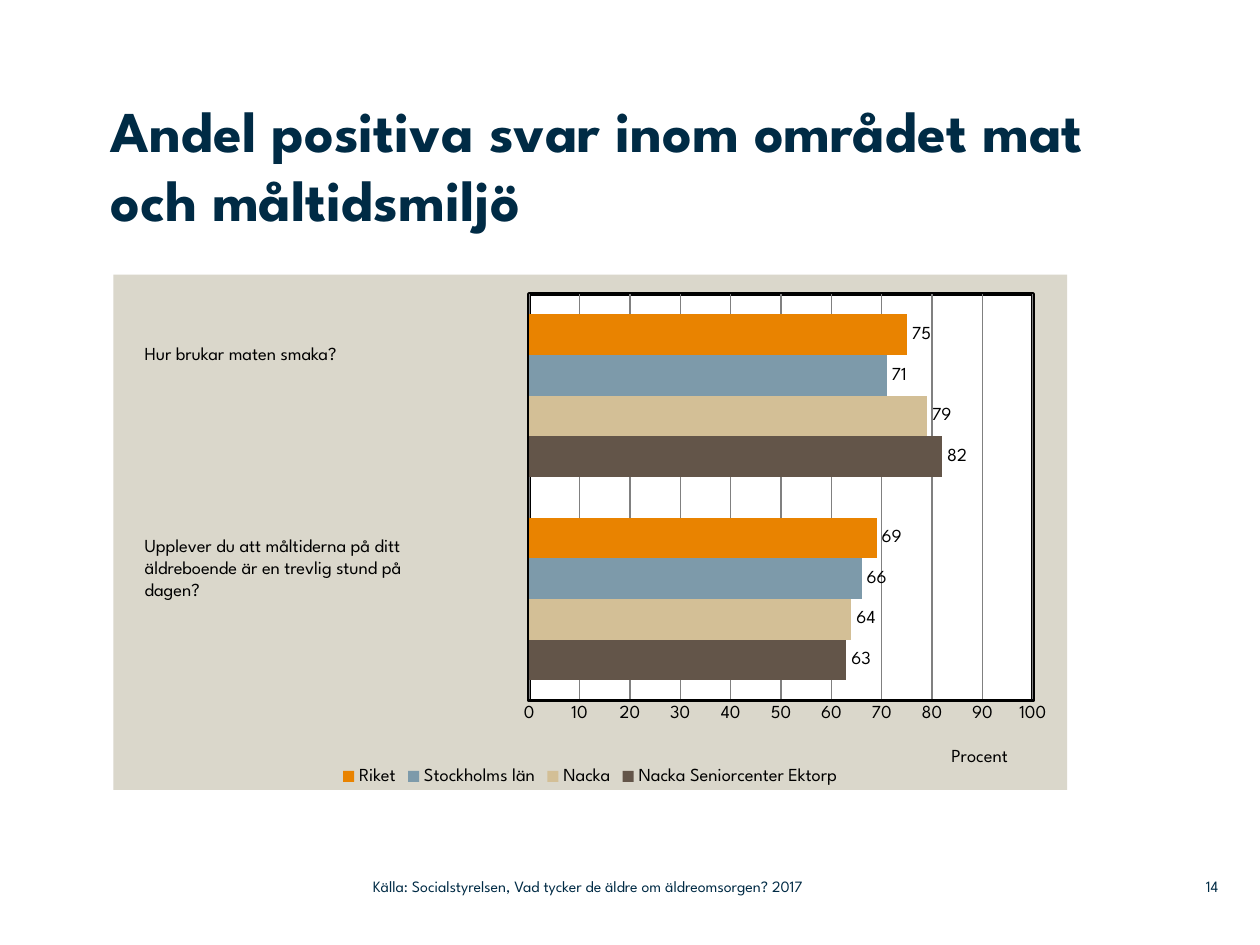
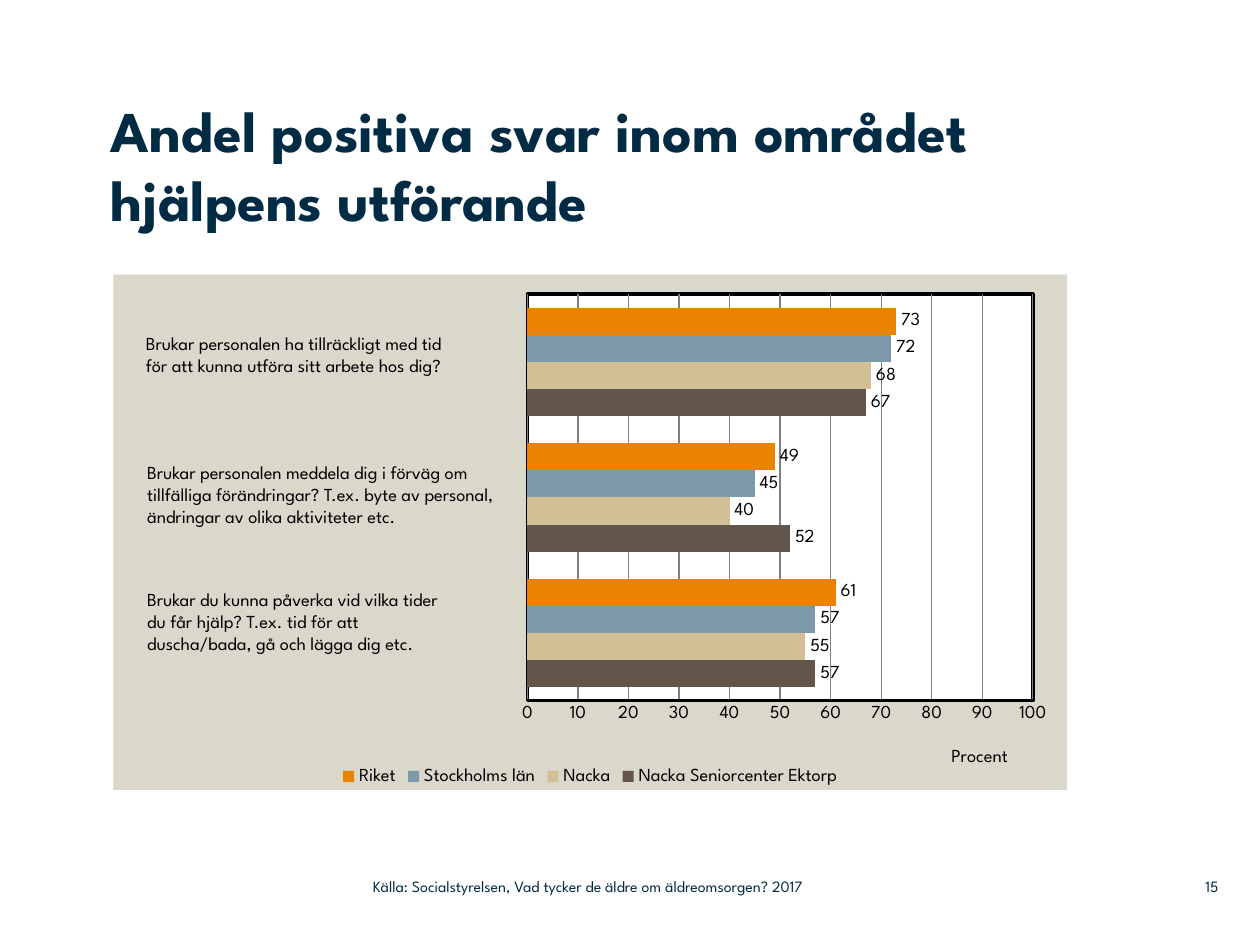
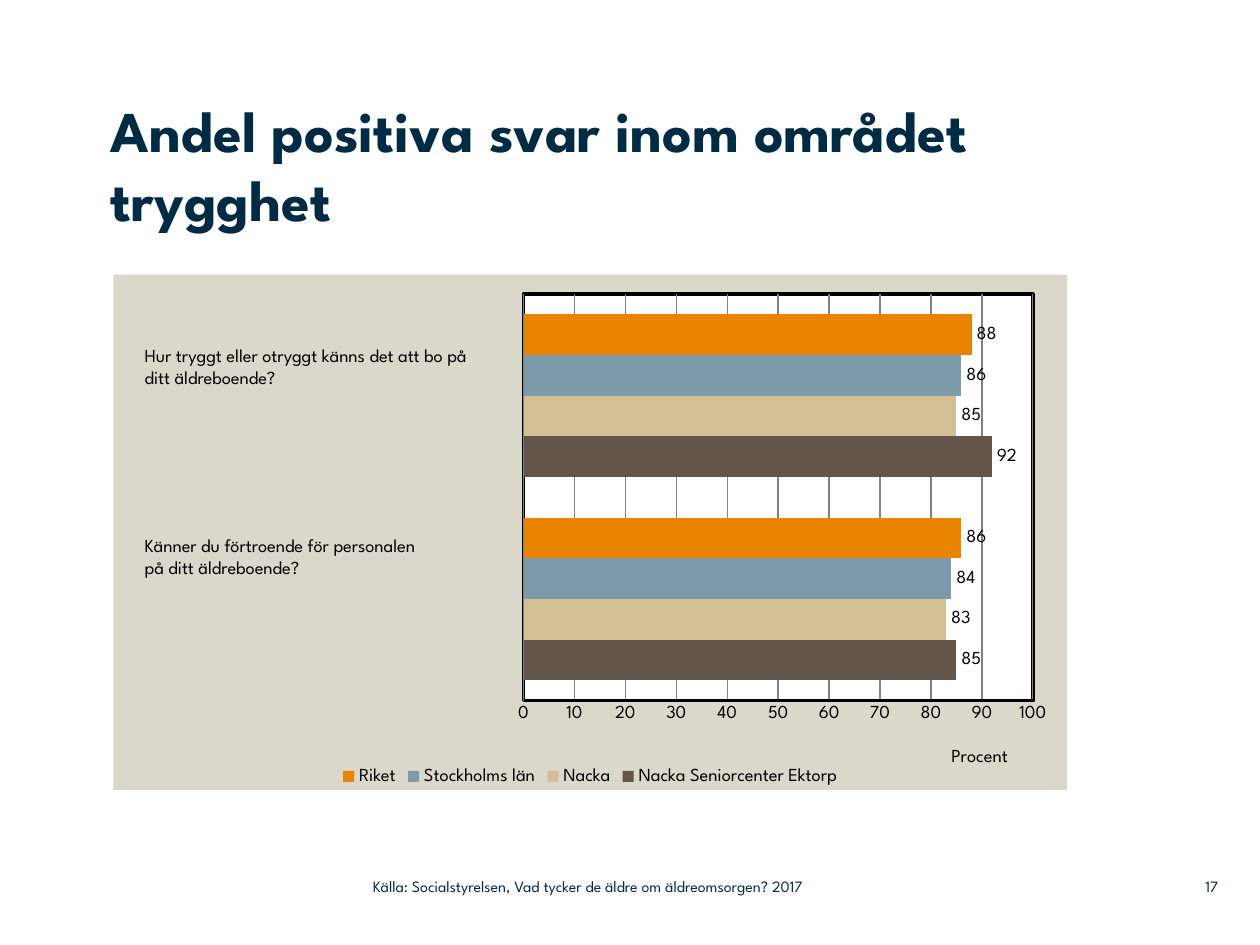
"""Builds three slides that compare positive answers in bar charts."""
from lxml.etree import SubElement, fromstring
from pptx import Presentation
from pptx.chart.data import CategoryChartData
from pptx.dml.color import RGBColor
from pptx.enum.chart import XL_CHART_TYPE as ChartType
from pptx.enum.chart import XL_LABEL_POSITION as LabelPosition
from pptx.enum.chart import XL_LEGEND_POSITION as LegendPosition
from pptx.enum.chart import XL_TICK_MARK as TickMark
from pptx.enum.text import MSO_ANCHOR as Anchor
from pptx.enum.text import MSO_AUTO_SIZE as AutoSize
from pptx.enum.text import PP_ALIGN as Align
from pptx.oxml.ns import nsdecls, qn
from pptx.util import Inches, Pt

NAVY = RGBColor(0x00, 0x2B, 0x45)
BLACK = RGBColor(0x00, 0x00, 0x00)
WHITE = RGBColor(0xFF, 0xFF, 0xFF)
GREY = RGBColor(0x80, 0x80, 0x80)
STONE = RGBColor(0xDA, 0xD7, 0xCB)
BROWN = RGBColor(0x63, 0x55, 0x49)
SAND = RGBColor(0xD3, 0xBF, 0x96)
BLUE = RGBColor(0x7D, 0x9A, 0xAA)
ORANGE = RGBColor(0xE9, 0x83, 0x00)

FONT = "League Spartan"
COLUMNS, ROWS = 100, 75
REGIONS = {
    "Nacka Seniorcenter Ektorp": BROWN,
    "Nacka": SAND,
    "Stockholms län": BLUE,
    "Riket": ORANGE,
}
SOURCE = "Källa: Socialstyrelsen, Vad tycker de äldre om äldreomsorgen? 2017"

AREAS = [
    dict(
        title="Andel positiva svar inom området mat och måltidsmiljö",
        title_width=84.2,
        number=14,
        plot=(0.436, 0.528),
        answers=[(63, 82), (64, 79), (66, 71), (69, 75)],
        questions=[
            (10.5, 26.7, 29.7, "Hur brukar maten smaka?"),
            (10.5, 41.9, 29.3, "Upplever du att måltiderna på ditt äldreboende är "
                               "en trevlig stund på\ndagen?"),
        ],
    ),
    dict(
        title="Andel positiva svar inom området hjälpens utförande",
        title_width=76,
        number=15,
        plot=(0.434, 0.53),
        answers=[(57, 52, 67), (55, 40, 68), (57, 45, 72), (61, 49, 73)],
        questions=[
            (10.6, 25.9, 29.9, "Brukar personalen ha tillräckligt med tid\n"
                               "för att kunna utföra sitt arbete hos dig?"),
            (10.7, 36.1, 29.7, "Brukar personalen meddela dig i förväg om tillfälliga "
                               "förändringar? T.ex. byte av personal, ändringar av "
                               "olika aktiviteter etc."),
            (10.7, 46.2, 29.7, "Brukar du kunna påverka vid vilka tider\n"
                               "du får hjälp? T.ex. tid för att\n"
                               "duscha/bada, gå och lägga dig etc."),
        ],
    ),
    dict(
        title="Andel positiva svar inom området trygghet",
        title_width=76,
        number=17,
        plot=(0.43, 0.534),
        answers=[(85, 92), (83, 85), (84, 86), (86, 88)],
        questions=[
            (10.5, 26.8, 29.4, "Hur tryggt eller otryggt känns det att bo på "
                               "ditt äldreboende?"),
            (10.5, 41.9, 29.3, "Känner du förtroende för personalen\n"
                               "på ditt äldreboende?"),
        ],
    ),
]


def style_font(font, size=10.5, color=BLACK, bold=False):
    font.name = FONT
    font.size = Pt(size)
    font.bold = bold
    font.color.rgb = color


def write(frame, text, align=Align.LEFT, anchor=Anchor.TOP, inset=None, **font_style):
    frame.word_wrap = True
    frame.auto_size = AutoSize.NONE
    frame.vertical_anchor = anchor
    if inset is not None:
        frame.margin_left = frame.margin_right = Pt(inset)
        frame.margin_top = frame.margin_bottom = Pt(inset)
    for index, line in enumerate(text.split("\n")):
        paragraph = frame.add_paragraph() if index else frame.paragraphs[0]
        paragraph.alignment = align
        run = paragraph.add_run()
        run.text = line
        style_font(run.font, **font_style)


def set_layout(parent, **places):
    layout = parent.find(qn("c:layout"))
    if layout is None:
        layout = fromstring(f"<c:layout {nsdecls('c')}/>")
        parent.insert(0, layout)
    manual = SubElement(layout, qn("c:manualLayout"))
    for tag, value in places.items():
        SubElement(manual, qn(f"c:{tag}")).set("val", str(value))


def area_format(fill, line=None):
    border = (f'<a:ln w="{Pt(2)}"><a:solidFill><a:srgbClr val="{line}"/></a:solidFill></a:ln>'
              if line is not None else "<a:ln><a:noFill/></a:ln>")
    return fromstring(f'<c:spPr {nsdecls("c", "a")}><a:solidFill><a:srgbClr val="{fill}"/>'
                      f"</a:solidFill>{border}</c:spPr>")


class Deck:
    """Holds the presentation, its grid and the current slide."""

    def __init__(self):
        self.show = Presentation()
        self.show.slide_width, self.show.slide_height = Inches(10), Inches(7.5)
        self.slide = None

    def box(self, left, top, width, height):
        column = self.show.slide_width / COLUMNS
        row = self.show.slide_height / ROWS
        return (round(left * column), round(top * row),
                round(width * column), round(height * row))

    def add_slide(self, title, title_width):
        self.slide = self.show.slides.add_slide(self.show.slide_layouts[5])
        heading = self.slide.shapes.title
        heading.left, heading.top, heading.width, heading.height = self.box(
            8.8, 7.5, title_width, 14.2)
        write(heading.text_frame, title, inset=0, size=33, color=NAVY, bold=True)

    def add_text(self, text, place, **text_style):
        textbox = self.slide.shapes.add_textbox(*self.box(*place))
        write(textbox.text_frame, text, **text_style)

    def add_question(self, left, top, width, text):
        height = 2.8 + 1.75 * text.count("\n")
        self.add_text(text, (left, top, width, height))

    def add_footer(self, number):
        footer_style = dict(anchor=Anchor.MIDDLE, inset=0, size=9, color=NAVY)
        self.add_text(str(number), (92, 68.9, 4.7, 2.9), align=Align.RIGHT, **footer_style)
        self.add_text(SOURCE, (29.6, 68.9, 44.3, 2.9), **footer_style)

    def add_bars(self, answers, plot):
        data = CategoryChartData()
        data.categories = [str(index + 1) for index in range(len(answers[0]))]
        for region, shares in zip(REGIONS, answers):
            data.add_series(region, shares)
        chart = self.slide.shapes.add_chart(
            ChartType.BAR_CLUSTERED, *self.box(9, 21.8, 75.7, 40.9), data).chart
        style_font(chart.font)
        chart.has_title = False
        chart.has_legend = True
        chart.legend.position = LegendPosition.BOTTOM
        chart.legend.include_in_layout = False
        style_font(chart.legend.font)
        self.style_bars(chart.plots[0])
        self.style_axes(chart)
        left, width = plot
        plot_area = chart.plots[0]._element.getparent()
        set_layout(plot_area, layoutTarget="inner", xMode="edge", yMode="edge",
                   x=left, y=0.038, w=width, h=0.789)
        plot_area.append(area_format(WHITE, BLACK))
        plot_area.getparent().addnext(area_format(STONE))

    def style_bars(self, bars):
        bars.gap_width = 100
        bars.overlap = 0
        bars.vary_by_categories = False
        for series, color in zip(bars.series, REGIONS.values()):
            series.format.fill.solid()
            series.format.fill.fore_color.rgb = color
            labels = series.data_labels
            labels.show_value = True
            labels.position = LabelPosition.OUTSIDE_END
            style_font(labels.font)

    def style_axes(self, chart):
        chart.category_axis.visible = False
        percent = chart.value_axis
        percent.minimum_scale, percent.maximum_scale, percent.major_unit = 0, 100, 10
        percent.major_tick_mark = percent.minor_tick_mark = TickMark.NONE
        style_font(percent.tick_labels.font)
        percent.format.line.color.rgb = BLACK
        percent.format.line.width = Pt(2)
        percent.has_major_gridlines = True
        grid_line = percent.major_gridlines.format.line
        grid_line.color.rgb = GREY
        grid_line.width = Pt(0.75)
        caption = percent.axis_title.text_frame.paragraphs[0].add_run()
        caption.text = "Procent"
        style_font(caption.font)
        set_layout(percent.axis_title._element, xMode="edge", yMode="edge", x=0.875, y=0.91)


def main():
    deck = Deck()
    for area in AREAS:
        deck.add_slide(area["title"], area["title_width"])
        deck.add_bars(area["answers"], area["plot"])
        for question in area["questions"]:
            deck.add_question(*question)
        deck.add_footer(area["number"])
    deck.show.save("out.pptx")


if __name__ == "__main__":
    main()
